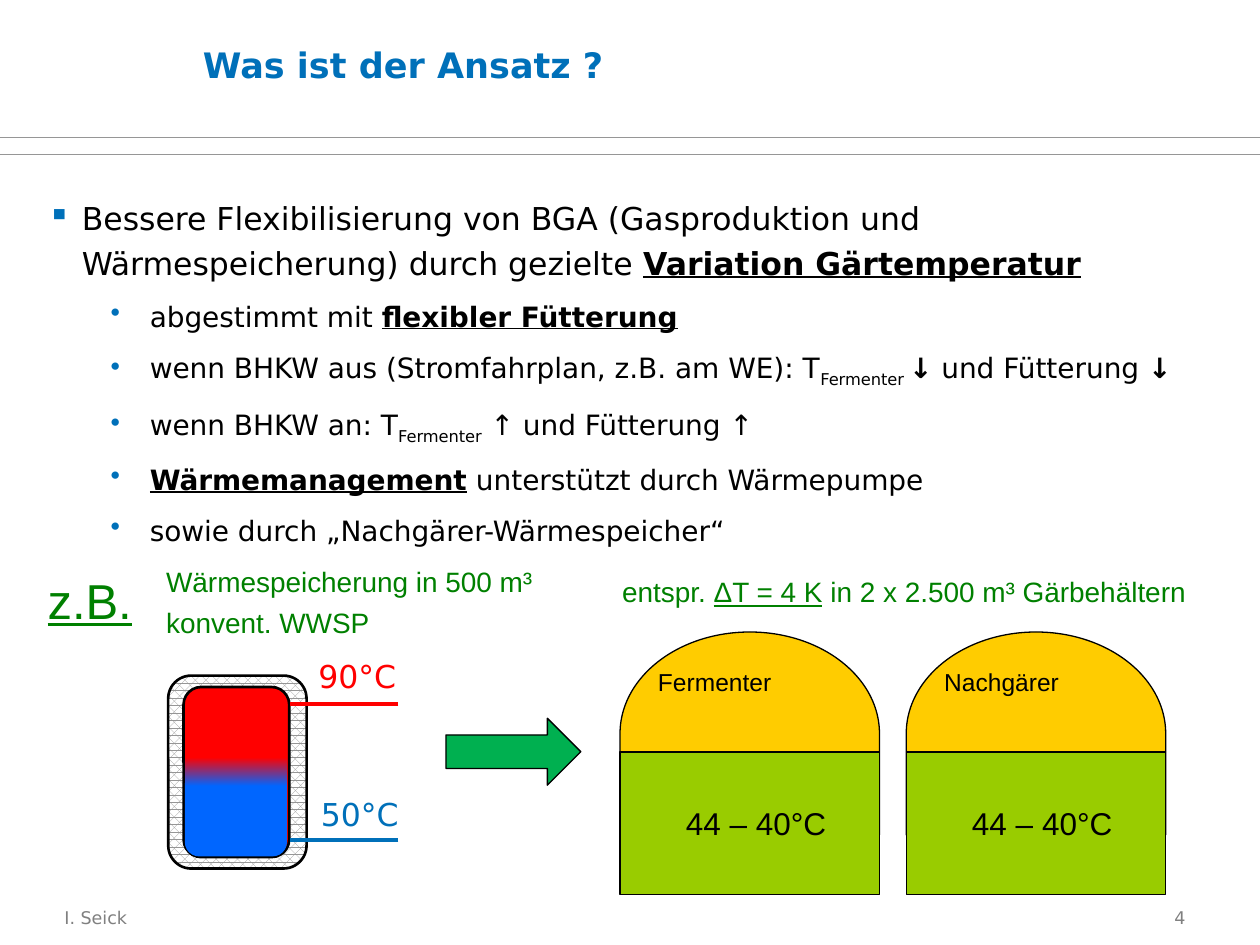
from lxml import etree
from pptx import Presentation
from pptx import util as u
from pptx.dml.color import RGBColor
from pptx.enum import dml, shapes, text
from pptx.oxml.ns import qn

SANS, ARIAL = "DejaVu Sans", "Arial"
BLUE, GREEN, GREY = "0070B9", "008000", "808080"
RED, BLACK = "FF0000", "000000"
FORM = shapes.MSO_SHAPE
ALIGN = text.PP_ALIGN

# Runs are (text, marks): b bold, u underlined, s subscript
TITLE = [("Was ist der Ansatz ?", "b")]
POINTS = [
    (0, [("Bessere Flexibilisierung von BGA (Gasproduktion und "
          "Wärmespeicherung) durch gezielte ", ""),
         ("Variation Gärtemperatur", "bu")]),
    (1, [("abgestimmt mit ", ""), ("flexibler Fütterung", "bu")]),
    (1, [("wenn BHKW aus (Stromfahrplan, z.B. am WE): T", ""),
         ("Fermenter ", "s"), ("↓", "b"), (" und Fütterung ", ""), ("↓", "b")]),
    (1, [("wenn BHKW an: T", ""), ("Fermenter", "s"),
         (" ↑ und Fütterung ↑", "")]),
    (1, [("Wärmemanagement", "bu"), (" unterstützt durch Wärmepumpe", "")]),
    (1, [("sowie durch „Nachgärer-Wärmespeicher“", "")]),
]
# Per level: bullet, text size, left margin, hanging indent
LEVELS = [("▪", 18, 0.69, -0.69), ("•", 16, 2.06, -0.79)]

# Place, size, runs
LABELS = [
    ((0.71, 11.13, 2.36, 1.55), 28, [("z.B.", "u")]),
    ((3.1, 11.13, 9.6, 1.83), 16,
     [("Wärmespeicherung in 500 m³ konvent. WWSP", "")]),
    ((12.29, 11.33, 12.19, 0.99), 16,
     [("entspr. ", ""), ("ΔT = 4 K", "u"),
      (" in 2 x 2.500 m³ Gärbehältern", "")]),
]
# Label, colour, text left, text top, line height
TEMPS = [("90°C", RED, 6.17, 13.13, 14.2), ("50°C", BLUE, 6.22, 15.9, 16.93)]
VESSELS = ["Fermenter", "Nachgärer"]
WARMTH = "44 – 40°C"
LEFT, STEP, WIDE = 12.5, 5.77, 5.23
LEVEL, DEPTH, RISE = 15.16, 2.87, 4.09
DOME_TOP = 12.74

deck = Presentation()
deck.slide_width, deck.slide_height = u.Cm(25.4), u.Cm(19.05)
slide = deck.slides.add_slide(deck.slide_layouts[6])


def rgb(code):
    return RGBColor.from_string(code)


def write(para, runs, size, font, color):
    for words, marks in runs:
        run = para.add_run()
        run.text = words
        face = run.font
        face.size, face.name = u.Pt(size), font
        face.color.rgb = rgb(color)
        face.bold, face.underline = "b" in marks, "u" in marks
        if "s" in marks:
            run._r.get_or_add_rPr().set("baseline", "-25000")


def inset(frame, *sides):
    (frame.margin_left, frame.margin_top,
     frame.margin_right, frame.margin_bottom) = map(u.Cm, sides)


def box(place, wrap=True):
    frame = slide.shapes.add_textbox(*map(u.Cm, place)).text_frame
    frame.word_wrap = wrap
    return frame


def form(kind, place, fill=None, line=None, turn=0):
    item = slide.shapes.add_shape(kind, *map(u.Cm, place))
    item.shadow.inherit = False
    item.rotation = turn
    if fill:
        item.fill.solid()
        item.fill.fore_color.rgb = rgb(fill)
    if line:
        item.line.color.rgb = rgb(BLACK)
        item.line.width = u.Pt(line)
    else:
        item.line.fill.background()
    return item


def rule(start, end, color, width):
    item = slide.shapes.add_connector(
        shapes.MSO_CONNECTOR.STRAIGHT, *map(u.Cm, start + end))
    item.line.color.rgb = rgb(color)
    item.line.width = u.Pt(width)
    etree.SubElement(item._element.spPr, qn("a:effectLst"))


def bullet(para, sign, left, hang):
    props = para._p.get_or_add_pPr()
    props.set("marL", str(u.Cm(left)))
    props.set("indent", str(u.Cm(hang)))
    tint = etree.SubElement(props, qn("a:buClr"))
    etree.SubElement(tint, qn("a:srgbClr"), val=BLUE)
    etree.SubElement(props, qn("a:buChar"), char=sign)


def frame_page():
    """Draw the header rules, footer and title."""
    for y in (3.12, 2.77):
        rule((0, y), (25.4, y), "969696", 0.5)
    for place, words, side in [
            ((1.3, 18.29, 4.5, 0.74), "I. Seick", ALIGN.LEFT),
            ((18.62, 18.29, 5.28, 0.64), "4", ALIGN.RIGHT)]:
        foot = box(place)
        inset(foot, 0, 0, 0, 0)
        foot.paragraphs[0].alignment = side
        write(foot.paragraphs[0], [(words, "")], 10, SANS, GREY)
    head = box((4.09, 0.74, 18.39, 1.4))
    inset(head, 0, 0.13, 0.25, 0.13)
    write(head.paragraphs[0], TITLE, 20, SANS, BLUE)


def list_points():
    body = box((0.71, 3.73, 24.51, 7.52))
    for i, (level, runs) in enumerate(POINTS):
        para = body.add_paragraph() if i else body.paragraphs[0]
        sign, size, left, hang = LEVELS[level]
        bullet(para, sign, left, hang)
        para.level = level
        para.line_spacing = 1.2
        if i:
            para.space_before = u.Pt(6)
        write(para, runs, size, SANS, BLACK)


def draw_tank():
    """Draw the insulated store with its hot and cold outlets."""
    shell = form(FORM.ROUNDED_RECTANGLE, (2.84, 14.17, 3.89, 2.79),
                 line=1.5, turn=90)
    shell.fill.patterned()
    shell.fill.pattern = dml.MSO_PATTERN.PERCENT_60
    shell.fill.fore_color.rgb = rgb("969696")
    shell.fill.back_color.rgb = rgb("FFFFFF")
    form(FORM.ROUNDED_RECTANGLE, (3.05, 14.5, 3.43, 2.13), RED, 1.5, 90)
    form(FORM.ROUNDED_RECTANGLE, (3.89, 15.37, 1.73, 2.06), "0066FF", turn=90)
    blend = form(FORM.RECTANGLE, (3.73, 15.27, 2.06, 0.58))
    blend.fill.gradient()
    blend.fill.gradient_angle = 270
    for stop, color in zip(blend.fill.gradient_stops, (RED, "0066FF")):
        stop.color.rgb = rgb(color)
    for words, color, x, y, line in TEMPS:
        rule((8.03, line), (5.84, line), color, 2.25)
        tag = box((x, y, 2.13, 1.02), wrap=False)
        write(tag.paragraphs[0], [(words, "")], 18, SANS, color)


def draw_vessel(x, name):
    mid = DOME_TOP + RISE / 2
    dome = form(FORM.FLOWCHART_DELAY,
                (x + (WIDE - RISE) / 2, mid - WIDE / 2, RISE, WIDE),
                "FFCC00", 0.75, 270)
    frame = dome.text_frame
    inset(frame, 0.1, 0, 0.1, 0.1)
    frame._txBody.bodyPr.set("vert", "eaVert")
    frame.vertical_anchor = text.MSO_ANCHOR.TOP
    frame.paragraphs[0].alignment = ALIGN.CENTER
    write(frame.paragraphs[0], [(name, "")], 14, ARIAL, BLACK)

    base = form(FORM.RECTANGLE, (x, LEVEL, WIDE, DEPTH), "99CC00", 0.75)
    frame = base.text_frame
    inset(frame, 0.5, 0.13, 0.25, 0.13)
    frame.vertical_anchor = text.MSO_ANCHOR.MIDDLE
    frame.paragraphs[0].alignment = ALIGN.CENTER
    write(frame.paragraphs[0], [(WARMTH, "")], 18, ARIAL, BLACK)
    rule((x, LEVEL), (x + 3.18, LEVEL), BLACK, 0.75)


frame_page()
list_points()
draw_tank()
form(FORM.RIGHT_ARROW, (8.99, 14.48, 2.72, 1.35), "00B050", 0.75)
for i, name in enumerate(VESSELS):
    draw_vessel(LEFT + i * STEP, name)
for place, size, runs in LABELS:
    para = box(place).paragraphs[0]
    para.line_spacing = 1.2
    write(para, runs, size, ARIAL, GREEN)
deck.save("out.pptx")
